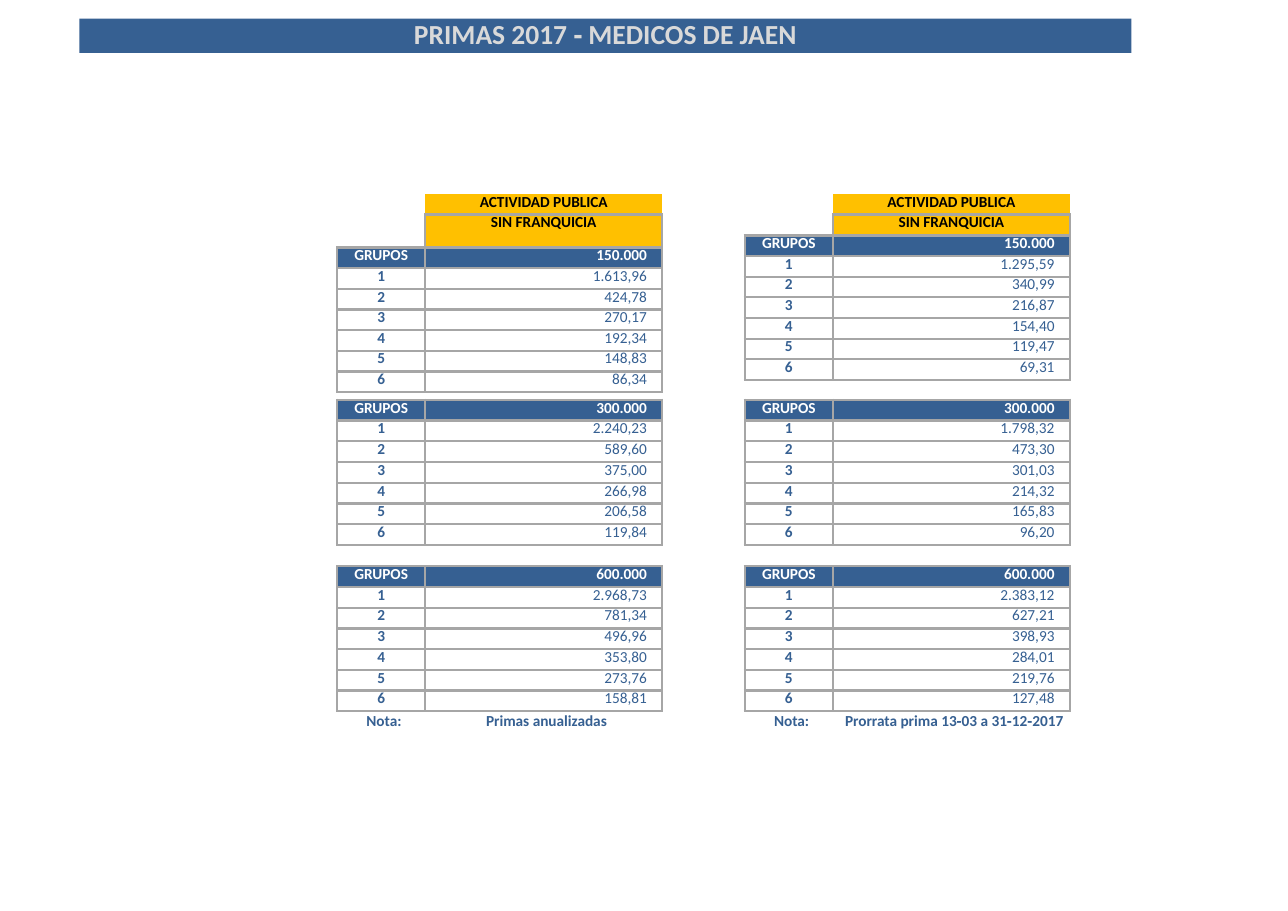
from dataclasses import dataclass

import pptx
import pptx.dml.color
import pptx.enum.text
import pptx.oxml.ns
import pptx.util
from lxml import etree
from pptx.util import Inches

ALIGN = pptx.enum.text.PP_ALIGN
qn = pptx.oxml.ns.qn


@dataclass(frozen=True)
class Theme:
    font: str = "Calibri"
    blue: str = "366092"
    amber: str = "FFC000"
    grid: str = "A6A6A6"
    title_text: str = "D9D9D9"
    white: str = "FFFFFF"
    black: str = "000000"
    title_size: float = 18
    body_size: float = 10
    title_leading: float = 20.3
    cell_leading: float = 11.3
    grid_width: float = 1.68


@dataclass(frozen=True)
class Box:
    left: float
    top: float
    width: float
    height: float

    def lengths(self):
        return [Inches(side) for side in (self.left, self.top, self.width, self.height)]


THEME = Theme()
NO_GRID_STYLE = "{2D5ABB26-0587-4C30-8999-92F81FD0307C}"
GROUP_COLUMN, PREMIUM_COLUMN = 0.8, 2.15
HEADINGS = ["ACTIVIDAD PUBLICA", "SIN FRANQUICIA"]
BLOCK_TOPS = [1.76, 3.63, 5.14]
BLOCK_HEIGHTS = [1.69, 1.32, 1.32]
LIMITS = ["150.000", "300.000", "600.000"]

ANNUAL = [
    ["1.613,96", "424,78", "270,17", "192,34", "148,83", "86,34"],
    ["2.240,23", "589,60", "375,00", "266,98", "206,58", "119,84"],
    ["2.968,73", "781,34", "496,96", "353,80", "273,76", "158,81"],
]
PRORATED = [
    ["1.295,59", "340,99", "216,87", "154,40", "119,47", "69,31"],
    ["1.798,32", "473,30", "301,03", "214,32", "165,83", "96,20"],
    ["2.383,12", "627,21", "398,93", "284,01", "219,76", "127,48"],
]


def rgb(color):
    return pptx.dml.color.RGBColor.from_string(color)


def write(frame, text, color, size=THEME.body_size, bold=True, align=ALIGN.CENTER, leading=None):
    para = frame.paragraphs[0]
    para.alignment = align
    if leading:
        para.line_spacing = pptx.util.Pt(leading)
    span = para.add_run()
    span.text = text
    span.font.name = THEME.font
    span.font.size = pptx.util.Pt(size)
    span.font.bold = bold
    span.font.color.rgb = rgb(color)


def clear_insets(holder):
    holder.margin_left = holder.margin_right = 0
    holder.margin_top = holder.margin_bottom = 0


def add_borders(cell, sides):
    """Draw the given sides, named by the letters L, R, T and B in that order."""
    properties = cell._tc.get_or_add_tcPr()
    for position, side in enumerate(sides):
        line = etree.Element(qn(f"a:ln{side}"), w=str(pptx.util.Pt(THEME.grid_width)))
        fill = etree.SubElement(line, qn("a:solidFill"))
        etree.SubElement(fill, qn("a:srgbClr"), val=THEME.grid)
        properties.insert(position, line)


def fill_cell(cell, text, color, fill=None, bold=True, align=ALIGN.CENTER, sides="LRTB"):
    clear_insets(cell)
    if align == ALIGN.RIGHT:
        cell.margin_right = Inches(0.14)
    write(cell.text_frame, text, color, bold=bold, align=align, leading=THEME.cell_leading)
    if fill:
        cell.fill.solid()
        cell.fill.fore_color.rgb = rgb(fill)
    else:
        cell.fill.background()
    add_borders(cell, sides)


def add_headings(table):
    """Fill the two amber heading rows beside an empty merged corner."""
    for row in range(len(HEADINGS)):
        corner = table.cell(row, 0)
        clear_insets(corner)
        etree.SubElement(corner.text_frame.paragraphs[0]._p, qn("a:endParaRPr"),
                         sz=str(THEME.body_size * 100))
    table.cell(0, 0).merge(table.cell(1, 0))
    for row, (heading, sides) in enumerate(zip(HEADINGS, ["B", "LRTB"])):
        fill_cell(table.cell(row, 1), heading, THEME.black, THEME.amber, sides=sides)


def add_premium_table(slide, box, limit, premiums, headed, second_row):
    first = len(HEADINGS) if headed else 0
    count = first + 1 + len(premiums)
    table = slide.shapes.add_table(count, 2, *box.lengths()).table
    table._tbl.tblPr.find(qn("a:tableStyleId")).text = NO_GRID_STYLE
    table.first_row = table.horz_banding = False
    for column, width in zip(table.columns, (GROUP_COLUMN, PREMIUM_COLUMN)):
        column.width = Inches(width)
    for row in table.rows:
        row.height = Inches(box.height / count)
    if headed:
        table.rows[1].height = Inches(second_row)
        add_headings(table)
    fill_cell(table.cell(first, 0), "GRUPOS", THEME.white, THEME.blue)
    fill_cell(table.cell(first, 1), limit, THEME.white, THEME.blue, align=ALIGN.RIGHT)
    for group, premium in enumerate(premiums, start=1):
        fill_cell(table.cell(first + group, 0), str(group), THEME.blue)
        fill_cell(table.cell(first + group, 1), premium, THEME.blue, bold=False, align=ALIGN.RIGHT)


def add_note(slide, box, text):
    frame = slide.shapes.add_textbox(*box.lengths()).text_frame
    clear_insets(frame)
    frame.word_wrap = False
    write(frame, text, THEME.blue)


def add_premium_column(slide, box, blocks, note, note_width, second_row):
    """Stack the three premium tables and put the note under them."""
    for index, premiums in enumerate(blocks):
        block = Box(box.left, BLOCK_TOPS[index], box.width, BLOCK_HEIGHTS[index])
        add_premium_table(slide, block, LIMITS[index], premiums, index == 0, second_row)
    bottom = box.top + box.height
    add_note(slide, Box(box.left + 0.25, bottom, 0.35, 0.19), "Nota:")
    note_center = box.left + 1.9
    add_note(slide, Box(note_center - note_width / 2, bottom, note_width, 0.19), note)


def add_title(slide, box, text):
    title = slide.shapes.title
    title.left, title.top, title.width, title.height = box.lengths()
    title.fill.solid()
    title.fill.fore_color.rgb = rgb(THEME.blue)
    frame = title.text_frame
    clear_insets(frame)
    frame.auto_size = pptx.enum.text.MSO_AUTO_SIZE.NONE
    frame.vertical_anchor = pptx.enum.text.MSO_ANCHOR.TOP
    write(frame, text, THEME.title_text, THEME.title_size, leading=THEME.title_leading)


def main():
    deck = pptx.Presentation()
    deck.slide_width, deck.slide_height = Inches(11.69), Inches(8.27)
    slide = deck.slides.add_slide(deck.slide_layouts.get_by_name("Title Only"))
    add_title(slide, Box(0.72, 0.17, 9.55, 0.31), "PRIMAS 2017 ‐ MEDICOS DE JAEN")
    add_premium_column(slide, Box(3.06, 1.76, 2.95, 4.7), ANNUAL,
                       "Primas anualizadas", 1.13, second_row=0.3)
    add_premium_column(slide, Box(6.76, 1.76, 2.95, 4.7), PRORATED,
                       "Prorrata prima 13‐03 a 31‐12‐2017", 2.01, second_row=0.19)
    deck.save("out.pptx")


if __name__ == "__main__":
    main()
